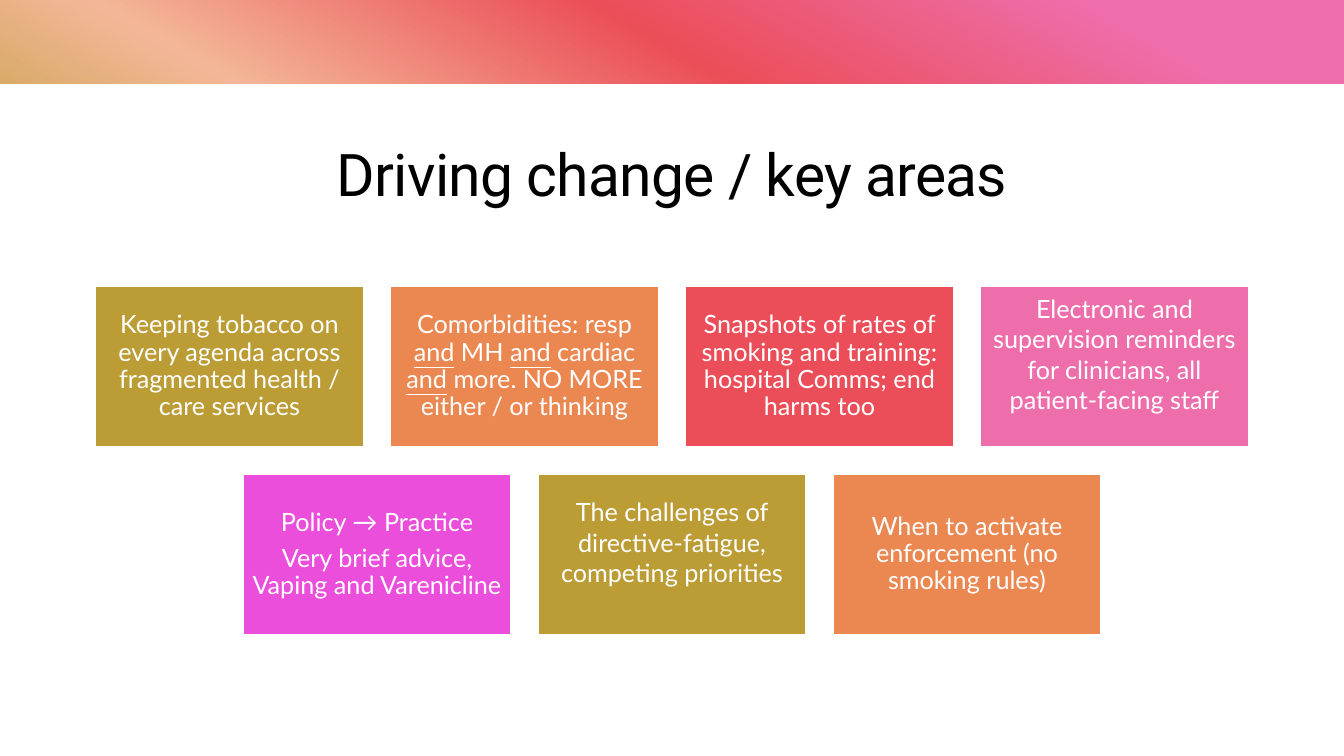
import copy

import pptx
import pptx.dml.color
import pptx.enum.shapes
import pptx.enum.text
import pptx.oxml.ns
import pptx.util

RGBColor = pptx.dml.color.RGBColor
WHITE = RGBColor(0xFF, 0xFF, 0xFF)
BLACK = RGBColor(0x00, 0x00, 0x00)
OLIVE = RGBColor(0xBB, 0x9C, 0x35)
ORANGE = RGBColor(0xEB, 0x87, 0x51)
RED = RGBColor(0xEB, 0x4E, 0x58)
PINK = RGBColor(0xEE, 0x6E, 0xAC)
MAGENTA = RGBColor(0xEB, 0x4E, 0xDB)
PEACH = RGBColor(0xF3, 0xB7, 0x97)
GREEN = RGBColor(0x97, 0xA8, 0x4D)

HEADING = "Driving change / key areas"
TIGHT, LOOSE = (0.9, 6.3, 7), (1.0, 0, 32)
AREA_ROWS = [
    [
        (OLIVE, TIGHT, ["Keeping tobacco on every agenda across fragmented health / care services"]),
        (ORANGE, TIGHT, ["Comorbidities: resp _and_ MH _and_ cardiac _and_ more. NO MORE either / or thinking"]),
        (RED, TIGHT, ["Snapshots of rates of smoking and training: hospital Comms; end harms too"]),
        (PINK, LOOSE, ["Electronic and supervision reminders for clinicians, all patient-facing staff"]),
    ],
    [
        (MAGENTA, TIGHT, ["Policy → Practice", "Very brief advice, Vaping and Varenicline"]),
        (OLIVE, LOOSE, ["The challenges of directive-fatigue, competing priorities"]),
        (ORANGE, TIGHT, ["When to activate enforcement (no smoking rules)"]),
    ],
]
BAND_STOPS = [(10, PINK), (30, RED), (50, PEACH), (70, OLIVE), (90, GREEN)]
BAND_OUTLINE = [(0, 0), (1344, 0), (1344, 673), (1261, 673), (1261, 85), (85, 85), (85, 673), (0, 673)]

SLIDE_W, SLIDE_H = 1344, 756
PANEL_TOP = 84
TILE_W, TILE_H = 268, 161
GAP = 27
TILES_TOP = 286
INSET = 7
EMU_PER_PX = 914400 / 100.8


def px(length):
    return pptx.util.Emu(round(length * EMU_PER_PX))


def add_box(slide, left, top, width, height, color):
    box = slide.shapes.add_shape(
        pptx.enum.shapes.MSO_SHAPE.RECTANGLE, px(left), px(top), px(width), px(height))
    box.shadow.inherit = False
    box.fill.solid()
    box.fill.fore_color.rgb = color
    box.line.fill.background()
    return box


def add_band(slide):
    builder = slide.shapes.build_freeform(*BAND_OUTLINE[0], scale=EMU_PER_PX)
    builder.add_line_segments(BAND_OUTLINE[1:], close=True)
    band = builder.convert_to_shape()
    band.shadow.inherit = False
    band.line.fill.background()
    band.fill.gradient()
    band.fill.gradient_angle = 240
    stop_list = band._element.spPr.find(".//" + pptx.oxml.ns.qn("a:gsLst"))
    for _ in range(len(BAND_STOPS) - len(stop_list)):
        stop_list.append(copy.deepcopy(stop_list[0]))
    for stop, (percent, color) in zip(band.fill.gradient_stops, BAND_STOPS):
        stop.position = percent / 100
        stop.color.rgb = color


def style_paragraph(paragraph, font_name, size, color, spacing):
    paragraph.alignment = pptx.enum.text.PP_ALIGN.CENTER
    paragraph.line_spacing = spacing
    paragraph.font.name = font_name
    paragraph.font.size = pptx.util.Pt(size)
    paragraph.font.color.rgb = color


def place_heading(slide):
    heading = slide.shapes.title
    slide.shapes._spTree.append(heading._element)
    heading.left, heading.top, heading.width, heading.height = px(168), px(125), px(1008), px(102)
    heading.text_frame.vertical_anchor = pptx.enum.text.MSO_ANCHOR.MIDDLE
    paragraph = heading.text_frame.paragraphs[0]
    style_paragraph(paragraph, "Roboto", 42, BLACK, 0.95)
    run = paragraph.add_run()
    run.text = HEADING
    run._r.get_or_add_rPr().set("spc", "-50")


def add_tile(slide, left, top, color, layout, texts):
    spacing, space_after, bottom_inset = layout
    tile = add_box(slide, left, top, TILE_W, TILE_H, color)
    tile.line.color.rgb = WHITE
    tile.line.width = pptx.util.Pt(1)
    frame = tile.text_frame
    frame.word_wrap = True
    frame.vertical_anchor = pptx.enum.text.MSO_ANCHOR.MIDDLE
    frame.margin_left = frame.margin_right = frame.margin_top = px(INSET)
    frame.margin_bottom = px(bottom_inset)
    for index, text in enumerate(texts):
        paragraph = frame.add_paragraph() if index else frame.paragraphs[0]
        style_paragraph(paragraph, "Lato", 18, WHITE, spacing)
        paragraph.space_after = pptx.util.Pt(space_after)
        for position, part in enumerate(text.split("_")):
            run = paragraph.add_run()
            run.text = part
            if position % 2:
                run.font.underline = True


def main():
    deck = pptx.Presentation()
    deck.slide_width, deck.slide_height = px(SLIDE_W), px(SLIDE_H)
    slide = deck.slides.add_slide(deck.slide_layouts.get_by_name("Title Only"))
    add_band(slide)
    add_box(slide, 0, PANEL_TOP, SLIDE_W, SLIDE_H - PANEL_TOP, WHITE)
    place_heading(slide)
    for row, areas in enumerate(AREA_ROWS):
        row_width = len(areas) * (TILE_W + GAP) - GAP
        row_left = (SLIDE_W - row_width) / 2
        for column, area in enumerate(areas):
            add_tile(slide, row_left + column * (TILE_W + GAP),
                     TILES_TOP + row * (TILE_H + GAP), *area)
    deck.save("out.pptx")


if __name__ == "__main__":
    main()
